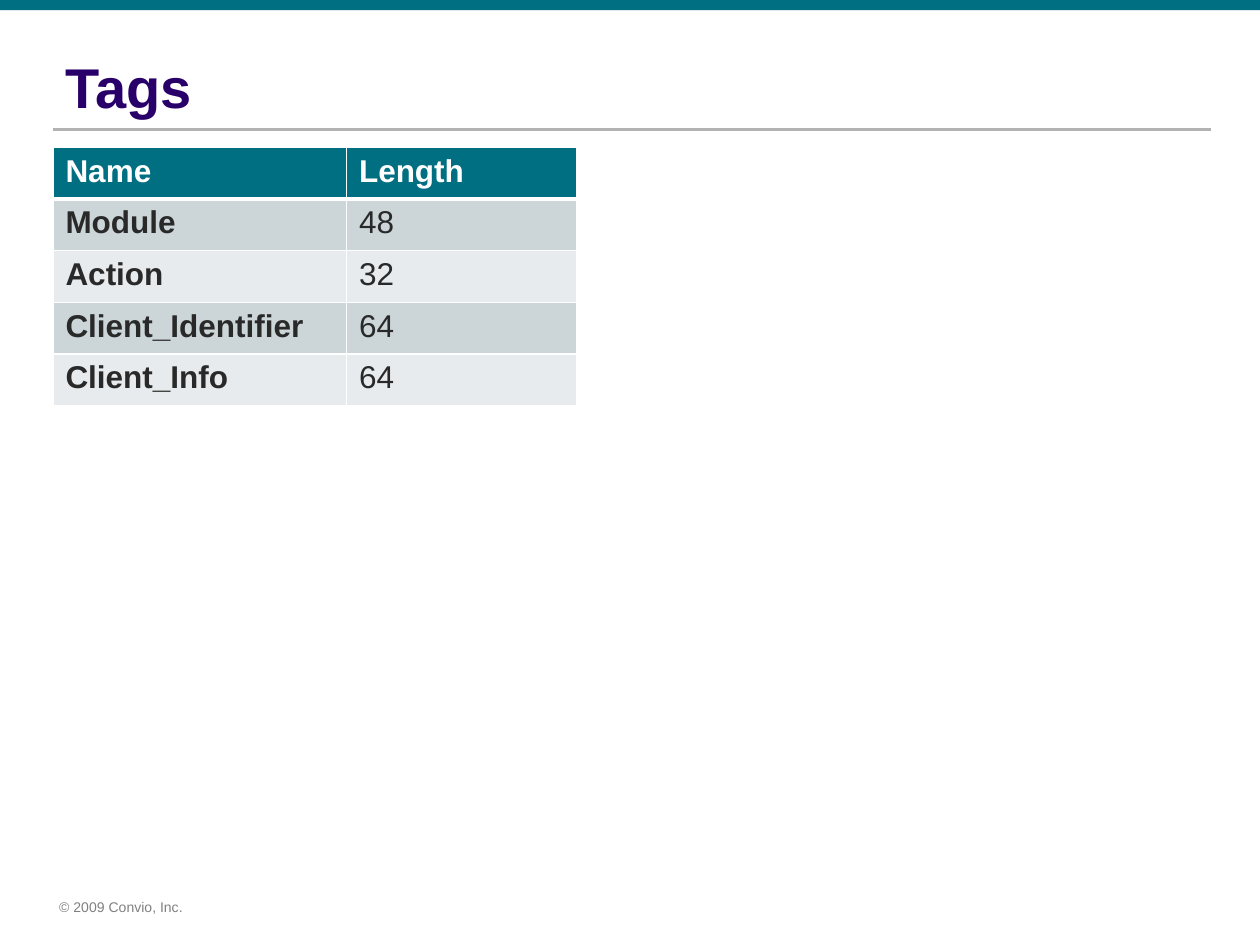
"""Build the Tags slide: a titled table of tag names and their lengths."""
import lxml.etree
import pptx
import pptx.dml.color
import pptx.enum.shapes
import pptx.enum.text
import pptx.oxml.ns
import pptx.util

WIDTH, HEIGHT = 10, 7.5
LEFT = 0.42
FONT = "Arial"
COLORS = {
    "teal": "006F82",
    "purple": "29006A",
    "footer": "808080",
    "rule": "B2B2B2",
    "body": "292929",
    "white": "FFFFFF",
    "dark_band": "CCD5D8",
    "light_band": "E7EBED",
}
TAGS = [
    ("Name", "Length"),
    ("Module", "48"),
    ("Action", "32"),
    ("Client_Identifier", "64"),
    ("Client_Info", "64"),
]
COLUMN_WIDTHS = (2.33, 1.83)
ROW_HEIGHT = 0.41


def rgb(name):
    """Return the named palette colour."""
    return pptx.dml.color.RGBColor.from_string(COLORS[name])


def inches(*lengths):
    """Convert lengths in inches to slide units."""
    return [pptx.util.Inches(length) for length in lengths]


def add_run(paragraph, text, size, color, bold=False):
    """Add one styled run to a paragraph."""
    run = paragraph.add_run()
    run.text = text
    run.font.name = FONT
    run.font.size = pptx.util.Pt(size)
    run.font.bold = bold
    run.font.color.rgb = rgb(color)


def add_top_bar(slide):
    """Add the coloured bar along the top edge."""
    bar = slide.shapes.add_shape(
        pptx.enum.shapes.MSO_SHAPE.RECTANGLE, *inches(0, 0, WIDTH, 0.08))
    bar.shadow.inherit = False
    bar.fill.solid()
    bar.fill.fore_color.rgb = rgb("teal")
    bar.line.fill.background()


def add_rule(slide, top):
    """Add the thin rule under the title."""
    rule = slide.shapes.add_connector(
        pptx.enum.shapes.MSO_CONNECTOR.STRAIGHT,
        *inches(LEFT, top, 9.61, top))
    rule.line.color.rgb = rgb("rule")
    rule.line.width = pptx.util.Pt(1.5)
    lxml.etree.SubElement(
        rule._element.spPr, pptx.oxml.ns.qn("a:effectLst"))


def add_label(slide, box, text, size, color, bold=False, wrap=True,
              anchor=pptx.enum.text.MSO_ANCHOR.TOP, left_inset=0.1):
    """Add a one-line text box."""
    frame = slide.shapes.add_textbox(*inches(*box)).text_frame
    frame.word_wrap = wrap
    frame.vertical_anchor = anchor
    frame.margin_left = pptx.util.Inches(left_inset)
    add_run(frame.paragraphs[0], text, size, color, bold)


def set_borders(cell, widths):
    """Draw white cell borders, with widths in points keyed by side."""
    properties = cell._tc.get_or_add_tcPr()
    for side in "LRTB":
        border = lxml.etree.SubElement(
            properties, pptx.oxml.ns.qn(f"a:ln{side}"),
            w=str(pptx.util.Pt(widths.get(side, 1))))
        fill = lxml.etree.SubElement(border, pptx.oxml.ns.qn("a:solidFill"))
        lxml.etree.SubElement(
            fill, pptx.oxml.ns.qn("a:srgbClr"), val=COLORS["white"])


def add_tag_table(slide, top):
    """Add the banded table of tags."""
    table = slide.shapes.add_table(
        len(TAGS), len(COLUMN_WIDTHS),
        *inches(LEFT, top, sum(COLUMN_WIDTHS), ROW_HEIGHT * len(TAGS))).table
    for column, width in zip(table.columns, COLUMN_WIDTHS):
        column.width = pptx.util.Inches(width)
    for row_index, tag in enumerate(TAGS):
        table.rows[row_index].height = pptx.util.Inches(ROW_HEIGHT)
        header = row_index == 0
        band = "dark_band" if row_index % 2 else "light_band"
        heavy_side = {0: {"B": 3}, 1: {"T": 3}}.get(row_index, {})
        for column_index, text in enumerate(tag):
            cell = table.cell(row_index, column_index)
            set_borders(cell, heavy_side)
            cell.fill.solid()
            cell.fill.fore_color.rgb = rgb("teal" if header else band)
            add_run(cell.text_frame.paragraphs[0], text, 18,
                    "white" if header else "body",
                    bold=header or column_index == 0)


def main():
    """Assemble and save the slide."""
    deck = pptx.Presentation()
    deck.slide_width, deck.slide_height = inches(WIDTH, HEIGHT)
    slide = deck.slides.add_slide(deck.slide_layouts[6])
    add_top_bar(slide)
    add_label(slide, (LEFT, 7.08, 1.15, 0.24), "© 2009 Convio, Inc.",
              8, "footer", wrap=False, left_inset=0.05)
    add_rule(slide, 1.03)
    add_label(slide, (LEFT, 0.37, 9.17, 0.63), "Tags", 32, "purple",
              bold=True, anchor=pptx.enum.text.MSO_ANCHOR.BOTTOM)
    add_tag_table(slide, 1.17)
    deck.save("out.pptx")


if __name__ == "__main__":
    main()
